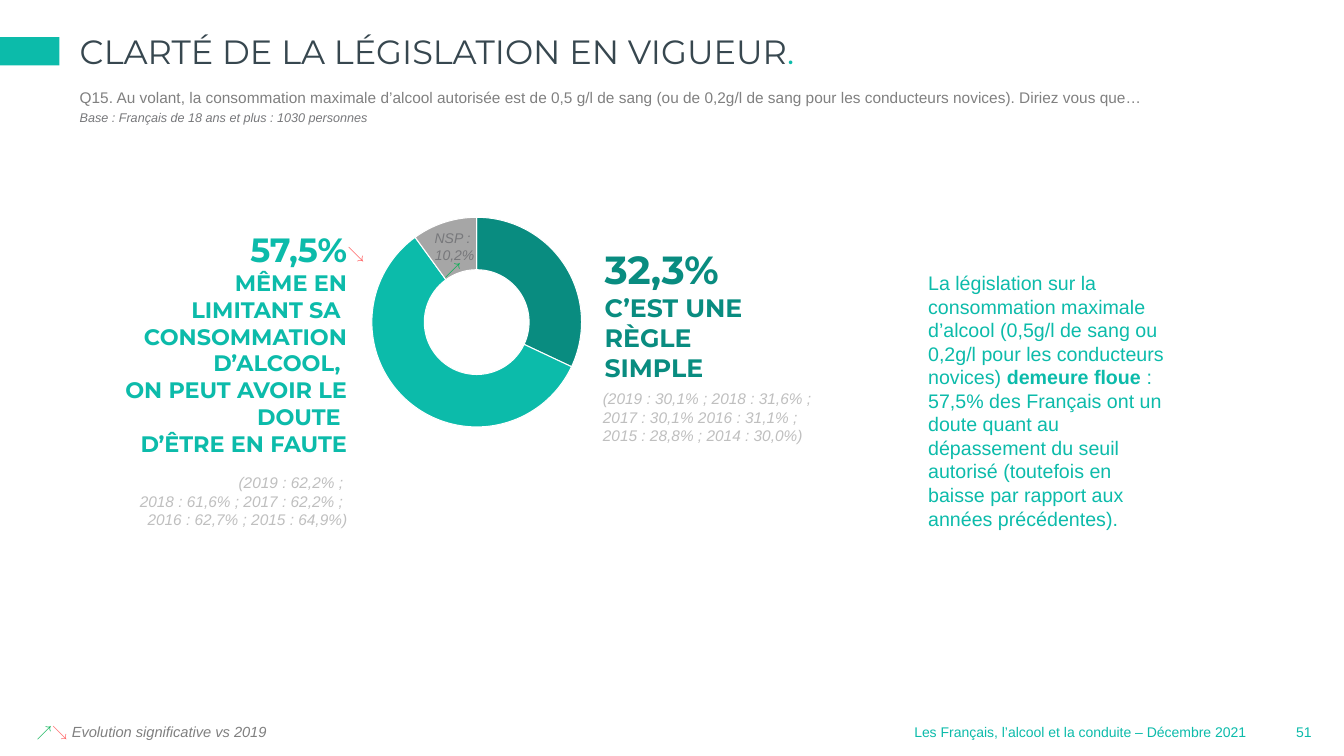
"""Builds the slide on how clear the drink-driving law is to French people."""
from dataclasses import dataclass, field

from lxml import etree
from pptx import Presentation
from pptx import util as u
from pptx.chart import data
from pptx.dml.color import RGBColor
from pptx.enum import chart as charts
from pptx.enum import shapes, text
from pptx.oxml import ns

COLOURS = {
    "teal": "0CBBAA", "deep": "098C80", "slate": "37474F", "grey": "808080",
    "dim": "77787B", "pale": "BFBFBF", "slice": "A6A6A6", "white": "FFFFFF",
    "up": "00B050", "down": "FF5859", "black": "000000",
}
LEFT, CENTRE, RIGHT = text.PP_ALIGN.LEFT, text.PP_ALIGN.CENTER, text.PP_ALIGN.RIGHT
TOP, MIDDLE = text.MSO_ANCHOR.TOP, text.MSO_ANCHOR.MIDDLE
Area = tuple[float, float, float, float]


@dataclass(frozen=True)
class Span:
    """A run of text with one look."""
    words: str
    size: float
    colour: str
    name: str = "Arial"
    bold: bool = False
    italic: bool = False


@dataclass(frozen=True)
class TextBlock:
    """A text area holding paragraphs made of spans."""
    area: Area
    paras: list[list[Span]]
    align: text.PP_ALIGN = LEFT
    anchor: text.MSO_ANCHOR = TOP
    wrap: bool = True
    inset: tuple[float, float] = field(default=(7.2, 3.6))


def rgb(name: str) -> RGBColor:
    """Return a named colour."""
    return RGBColor.from_string(COLOURS[name])


def apply(target: object, values: dict) -> None:
    """Set several attributes on an object."""
    for key, value in values.items():
        setattr(target, key, value)


def points(area: Area) -> list[u.Pt]:
    """Convert an area to lengths in points."""
    return [u.Pt(length) for length in area]


def montserrat(words: str, size: float, colour: str) -> list[Span]:
    """Return a bold headline paragraph."""
    return [Span(words, size, colour, "Montserrat", bold=True)]


def history(words: str) -> list[Span]:
    """Return a paragraph of earlier results."""
    return [Span(words, 11, "pale", italic=True)]


def write(box: object, block: TextBlock) -> None:
    """Fill a shape's text frame from a text block."""
    frame = box.text_frame
    side, edge = map(u.Pt, block.inset)
    apply(frame, {
        "word_wrap": block.wrap, "auto_size": text.MSO_AUTO_SIZE.NONE,
        "vertical_anchor": block.anchor, "margin_left": side,
        "margin_right": side, "margin_top": edge, "margin_bottom": edge,
    })
    for index, spans in enumerate(block.paras):
        para = frame.add_paragraph() if index else frame.paragraphs[0]
        para.alignment = block.align
        for span in spans:
            run = para.add_run()
            run.text = span.words
            apply(run.font, {
                "size": u.Pt(span.size), "name": span.name,
                "bold": span.bold, "italic": span.italic,
            })
            run.font.color.rgb = rgb(span.colour)


def fill_placeholder(box: object, block: TextBlock) -> None:
    """Move a placeholder and fill it with text."""
    apply(box, dict(zip(("left", "top", "width", "height"), points(block.area))))
    write(box, block)


def strip_bullets(box: object) -> None:
    """Turn list paragraphs into plain lines, each one level deeper."""
    for level, para in enumerate(box.text_frame.paragraphs):
        props = para._p.get_or_add_pPr()
        props.set("marL", "0")
        props.set("indent", "0")
        etree.SubElement(props, ns.qn("a:buNone"))
        apply(para, {"level": level, "space_before": u.Pt(0), "space_after": u.Pt(3)})


def add_doughnut(page: object, area: Area) -> None:
    """Draw the doughnut of the three answers."""
    answers = data.CategoryChartData()
    answers.categories = ["1", "2", "3"]
    answers.add_series("Series 1", (32, 58, 10))
    frame = page.shapes.add_chart(charts.XL_CHART_TYPE.DOUGHNUT, *points(area), answers)
    doughnut = frame.chart
    apply(doughnut, {"has_legend": False, "has_title": False})
    apply(doughnut.font, {"size": u.Pt(18), "name": "Arial"})
    doughnut.font.color.rgb = rgb("black")
    plot = doughnut.plots[0]
    apply(plot, {"vary_by_categories": True, "has_data_labels": False})
    for index, colour in enumerate(("deep", "teal", "slice")):
        style = plot.series[0].points[index].format
        style.fill.solid()
        style.fill.fore_color.rgb = rgb(colour)
        style.line.color.rgb = rgb("white")
        style.line.width = u.Pt(0.75)
    plot_area = doughnut._chartSpace.chart.plotArea
    for old in plot_area.findall(ns.qn("c:layout")):
        plot_area.remove(old)
    layout = etree.Element(ns.qn("c:layout"))
    manual = etree.SubElement(layout, ns.qn("c:manualLayout"))
    settings = {"layoutTarget": "inner", "xMode": "edge", "yMode": "edge",
                "x": "0.24", "y": "0.16", "w": "0.56", "h": "0.73"}
    for tag, value in settings.items():
        etree.SubElement(manual, ns.qn(f"c:{tag}")).set("val", value)
    plot_area.insert(0, layout)


TITLE = TextBlock((56.9, 22.3, 850.3, 33.8), [[
    Span("CLARTÉ DE LA LÉGISLATION EN VIGUEUR", 24, "slate", "Montserrat"),
    Span(".", 24, "teal", "Montserrat")]], inset=(0, 0))
QUESTION = TextBlock((56.9, 62.6, 850.3, 14.4), [
    [Span("Q15. Au volant, la consommation maximale d’alcool autorisée est de 0,5 g/l de sang "
          "(ou de 0,2g/l de sang pour les conducteurs novices). Diriez vous que…", 11, "grey")],
    [Span("Base : Français de 18 ans et plus : 1030 personnes", 9, "dim", italic=True)],
], inset=(0, 0))
DOUBT_LINES = ("MÊME EN LIMITANT SA ", "CONSOMMATION D’ALCOOL, ",
               "ON PEUT AVOIR LE DOUTE ", "D’ÊTRE EN FAUTE")
DOUBT_HISTORY = ("(2019 : 62,2% ; ", "2018 : 61,6% ; 2017 : 62,2% ; ",
                 "2016 : 62,7% ; 2015 : 64,9%)")
BLOCKS = [
    TextBlock((915.1, 513.4, 32.4, 19.4), [[Span("51", 10, "teal")]], CENTRE, wrap=False),
    TextBlock((643.7, 513.4, 253.4, 19.4), [[
        Span("Les Français, l’alcool et la conduite – Décembre 2021", 10, "teal")]],
        RIGHT, wrap=False),
    TextBlock((655.9, 190.1, 189.4, 193.7), [[
        Span("La législation sur la consommation maximale d’alcool (0,5g/l de sang ou "
             "0,2g/l pour les conducteurs novices) ", 14, "teal"),
        Span("demeure floue ", 14, "teal", bold=True),
        Span(": 57,5% des Français ont un doute quant au dépassement du seuil autorisé "
             "(toutefois en baisse par rapport aux années précédentes).", 14, "teal")]]),
    TextBlock((424.8, 171.4, 141.8, 106.6), [
        montserrat("32,3%", 28, "deep"), montserrat("C’EST UNE RÈGLE SIMPLE", 18, "deep")]),
    TextBlock((81.4, 159.8, 173.5, 172.1), [
        montserrat("57,5%", 24, "teal"),
        *(montserrat(line, 16, "teal") for line in DOUBT_LINES)], RIGHT),
    TextBlock((430.6, 277.9, 150.5, 40.3), [
        history("(2019 : 30,1% ; 2018 : 31,6% ; 2017 : 30,1% 2016 : 31,1% ; "
                "2015 : 28,8% ; 2014 : 30,0%)")], anchor=MIDDLE, inset=(0, 0)),
    TextBlock((43.9, 337.7, 204.5, 40.3), [history(line) for line in DOUBT_HISTORY],
              RIGHT, MIDDLE, inset=(0, 0)),
    TextBlock((7.9, 511.9, 200.9, 20.9), [[
        Span("↗", 11, "up"), Span("↘ ", 11, "down"),
        Span("Evolution significative vs 2019", 10.5, "grey", italic=True)]], CENTRE),
    TextBlock((241.2, 169.9, 29.5, 21.6), [[Span("↘", 12, "down")]]),
    TextBlock((288, 160.6, 73.4, 31.7), [
        [Span(line, 10, "dim", italic=True)] for line in ("NSP : ", "10,2%")], CENTRE),
    TextBlock((310.3, 181.4, 23, 21.6), [[Span("↗", 12, "up")]]),
]


def main() -> None:
    """Build and save the deck."""
    deck = Presentation()
    apply(deck, {"slide_width": u.Pt(960), "slide_height": u.Pt(540)})
    page = deck.slides.add_slide(deck.slide_layouts[1])
    fill_placeholder(page.shapes.title, TITLE)
    body = page.placeholders[1]
    fill_placeholder(body, QUESTION)
    strip_bullets(body)
    marker = page.shapes.add_shape(shapes.MSO_SHAPE.RECTANGLE, *points((0, 26.6, 42.5, 20.2)))
    marker.shadow.inherit = False
    marker.fill.solid()
    marker.fill.fore_color.rgb = rgb("teal")
    marker.line.fill.background()
    add_doughnut(page, (172.8, 122.4, 322.6, 205.2))
    for block in BLOCKS:
        write(page.shapes.add_textbox(*points(block.area)), block)
    deck.save("out.pptx")


if __name__ == "__main__":
    main()
